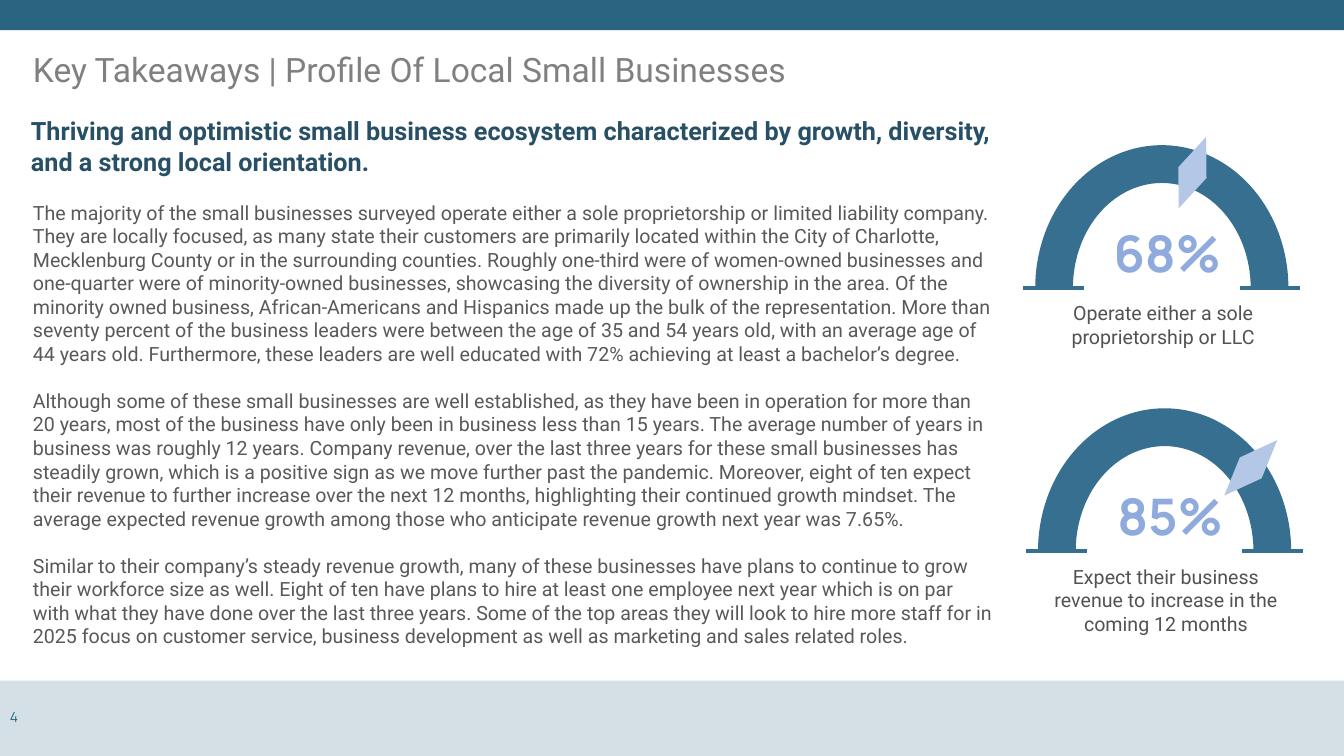
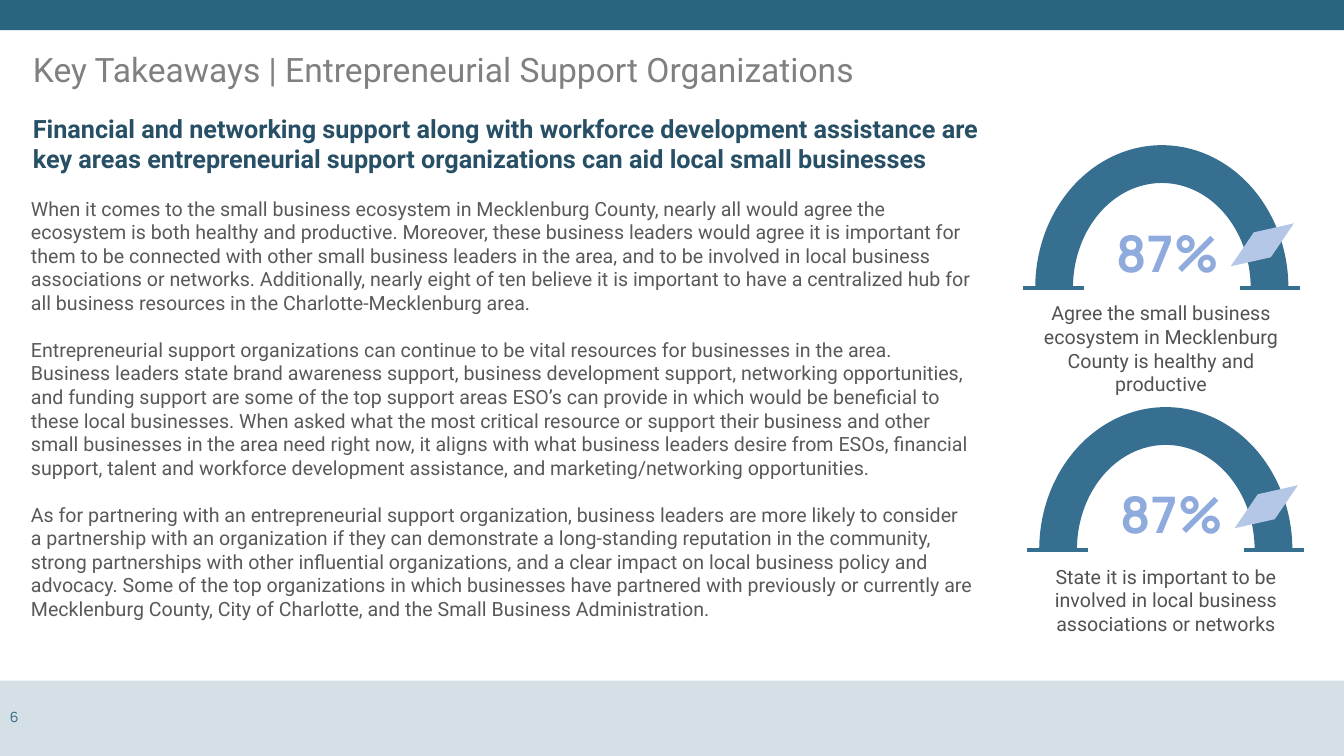
"""Builds two key-takeaway slides with text on the left and gauges on the right."""
from lxml.etree import SubElement
from pptx import Presentation
from pptx.dml.color import RGBColor
from pptx.enum.shapes import MSO_CONNECTOR, MSO_SHAPE
from pptx.enum.text import MSO_ANCHOR, PP_ALIGN
from pptx.oxml.ns import qn
from pptx.util import Cm, Pt

THEME = {
    "band": "296581",
    "arc": "366F90",
    "needle": "B4C7E7",
    "footer_alpha": 20,
    "text": {
        "title": {"color": "808080", "font": {"name": "Roboto", "size": Pt(24)},
                  "paragraph": {"line_spacing": 0.9}},
        "headline": {"color": "274F66", "font": {"name": "Roboto", "size": Pt(18), "bold": True}},
        "body": {"color": "595959", "font": {"name": "Roboto", "size": Pt(14)}, "gap": Pt(16.8)},
        "caption": {"color": "525252", "font": {"name": "Roboto", "size": Pt(14)},
                    "paragraph": {"alignment": PP_ALIGN.CENTER}},
        "value": {"color": "8FAADC", "font": {"name": "Manrope", "size": Pt(36), "bold": True},
                  "paragraph": {"alignment": PP_ALIGN.CENTER}},
        "number": {"color": "296581", "font": {"name": "Manrope", "size": Pt(10)},
                   "frame": {"vertical_anchor": MSO_ANCHOR.MIDDLE}},
    },
}

SLIDE_WIDTH, SLIDE_HEIGHT = 33.87, 19.05
TOP_BAND_HEIGHT, FOOTER_HEIGHT = 0.76, 1.9
TITLE_BOX = (0.58, 1.22, 23.14, 1.52)
NUMBER_BOX = (0, 17.55, 7.62, 1.02)
ARC_WIDTH, ARC_HEIGHT = 6.38, 7.19
ARC_ADJUSTMENTS = (107.569, 0, 0.149)
FOOT_LENGTH, FOOT_OVERHANG = 1.53, 0.3
NEEDLE_WIDTH, NEEDLE_HEIGHT = 0.76, 1.93
VALUE_OFFSET, VALUE_WIDTH, VALUE_HEIGHT = (1.5, 1.8), 3.66, 1.8

SLIDES = [
    {
        "number": "4",
        "title": "Key Takeaways | Profile Of Local Small Businesses",
        "headline": "Thriving and optimistic small business ecosystem characterized by growth, "
                    "diversity, and a strong local orientation.",
        "headline_box": (0.53, 2.79, 24.79, 1.8),
        "body_box": (0.58, 4.93, 24.71, 11.63),
        "body": [
            "The majority of the small businesses surveyed operate either a sole proprietorship or "
            "limited liability company. They are locally focused, as many state their customers are "
            "primarily located within the City of Charlotte, Mecklenburg County or in the "
            "surrounding counties. Roughly one-third were of women-owned businesses and one-quarter "
            "were of minority-owned businesses, showcasing the diversity of ownership in the area. "
            "Of the minority owned business, African-Americans and Hispanics made up the bulk of "
            "the representation. More than seventy percent of the business leaders were between "
            "the age of 35 and 54 years old, with an average age of 44 years old. Furthermore, "
            "these leaders are well educated with 72% achieving at least a bachelor’s degree.",
            "Although some of these small businesses are well established, as they have been in "
            "operation for more than 20 years, most of the business have only been in business less "
            "than 15 years. The average number of years in business was roughly 12 years. Company "
            "revenue, over the last three years for these small businesses has steadily grown, "
            "which is a positive sign as we move further past the pandemic. Moreover, eight of ten "
            "expect their revenue to further increase over the next 12 months, highlighting their "
            "continued growth mindset. The average expected revenue growth among those who "
            "anticipate revenue growth next year was 7.65%.",
            "Similar to their company’s steady revenue growth, many of these businesses have plans "
            "to continue to grow their workforce size as well. Eight of ten have plans to hire at "
            "least one employee next year which is on par with what they have done over the last "
            "three years. Some of the top areas they will look to hire more staff for in 2025 focus "
            "on customer service, business development as well as marketing and sales related "
            "roles.",
        ],
        "gauges": [
            {"value": "68%", "origin": (26.09, 3.66), "needle": (3.96, 0.69), "angle": 21,
             "caption": "Operate either a sole proprietorship or LLC",
             "caption_box": (25.81, 7.47, 7.01, 1.45)},
            {"value": "85%", "origin": (26.16, 10.29), "needle": (5.36, 1.5), "angle": 43.7,
             "caption": "Expect their business revenue to increase in the coming 12 months",
             "caption_box": (25.88, 14.1, 7.01, 2.06)},
        ],
    },
    {
        "number": "6",
        "title": "Key Takeaways | Entrepreneurial Support Organizations",
        "headline": "Financial and networking support along with workforce development assistance "
                    "are key areas entrepreneurial support organizations can aid local small "
                    "businesses",
        "headline_box": (0.58, 2.72, 24.54, 1.8),
        "body_box": (0.53, 4.83, 24.26, 11.02),
        "body": [
            "When it comes to the small business ecosystem in Mecklenburg County, nearly all would "
            "agree the ecosystem is both healthy and productive. Moreover, these business leaders "
            "would agree it is important for them to be connected with other small business leaders "
            "in the area, and to be involved in local business associations or networks. "
            "Additionally, nearly eight of ten believe it is important to have a centralized hub "
            "for all business resources in the Charlotte-Mecklenburg area.",
            "Entrepreneurial support organizations can continue to be vital resources for "
            "businesses in the area. Business leaders state brand awareness support, business "
            "development support, networking opportunities, and funding support are some of the top "
            "support areas ESO’s can provide in which would be beneficial to these local "
            "businesses. When asked what the most critical resource or support their business and "
            "other small businesses in the area need right now, it aligns with what business "
            "leaders desire from ESOs, financial support, talent and workforce development "
            "assistance, and marketing/networking opportunities.",
            "As for partnering with an entrepreneurial support organization, business leaders are "
            "more likely to consider a partnership with an organization if they can demonstrate a "
            "long-standing reputation in the community, strong partnerships with other influential "
            "organizations, and a clear impact on local business policy and advocacy. Some of the "
            "top organizations in which businesses have partnered with previously or currently are "
            "Mecklenburg County, City of Charlotte, and the Small Business Administration.",
        ],
        "gauges": [
            {"value": "87%", "origin": (26.09, 3.66), "needle": (5.72, 2.51), "angle": 55.8,
             "caption": "Agree the small business ecosystem in Mecklenburg County is healthy and "
                        "productive",
             "caption_box": (25.5, 7.47, 7.52, 2.06)},
            {"value": "87%", "origin": (26.19, 10.26), "needle": (5.72, 2.51), "angle": 55.8,
             "caption": "State it is important to be involved in local business associations or "
                        "networks",
             "caption_box": (25.88, 14.1, 7.01, 2.06)},
        ],
    },
]


def set_values(target, values):
    for name, value in values.items():
        setattr(target, name, value)


def add_text(shapes, box, texts, style_name):
    style = THEME["text"][style_name]
    frame = shapes.add_textbox(*map(Cm, box)).text_frame
    set_values(frame, {"word_wrap": True, **style.get("frame", {})})
    for index, text in enumerate(texts):
        paragraph = frame.add_paragraph() if index else frame.paragraphs[0]
        set_values(paragraph, style.get("paragraph", {}))
        if index:
            paragraph.space_before = style["gap"]
        run = paragraph.add_run()
        run.text = text
        set_values(run.font, style["font"])
        run.font.color.rgb = RGBColor.from_string(style["color"])


def add_filled(shapes, kind, box, color):
    shape = shapes.add_shape(kind, *map(Cm, box))
    shape.shadow.inherit = False
    shape.fill.solid()
    shape.fill.fore_color.rgb = RGBColor.from_string(color)
    shape.line.fill.background()
    return shape


def add_bands(shapes):
    footer_box = (0, SLIDE_HEIGHT - FOOTER_HEIGHT, SLIDE_WIDTH, FOOTER_HEIGHT)
    footer = add_filled(shapes, MSO_SHAPE.RECTANGLE, footer_box, THEME["band"])
    color = footer.fill._xPr.find(qn("a:solidFill"))[0]
    SubElement(color, qn("a:alpha"), val=str(THEME["footer_alpha"] * 1000))
    add_filled(shapes, MSO_SHAPE.RECTANGLE, (0, 0, SLIDE_WIDTH, TOP_BAND_HEIGHT), THEME["band"])


def add_foot(shapes, left, top):
    foot = shapes.add_connector(
        MSO_CONNECTOR.STRAIGHT, Cm(left), Cm(top), Cm(left + FOOT_LENGTH), Cm(top))
    foot.line.color.rgb = RGBColor.from_string(THEME["arc"])
    foot.line.width = Pt(3)
    SubElement(foot._element.spPr, qn("a:effectLst"))


def add_gauge(slide, gauge):
    shapes = slide.shapes.add_group_shape().shapes
    left, top = gauge["origin"]
    value_box = (left + VALUE_OFFSET[0], top + VALUE_OFFSET[1], VALUE_WIDTH, VALUE_HEIGHT)
    add_text(shapes, value_box, [gauge["value"]], "value")
    arc = add_filled(
        shapes, MSO_SHAPE.BLOCK_ARC, (left, top, ARC_WIDTH, ARC_HEIGHT), THEME["arc"])
    for index, adjustment in enumerate(ARC_ADJUSTMENTS):
        arc.adjustments[index] = adjustment
    for foot_left in (-FOOT_OVERHANG, ARC_WIDTH + FOOT_OVERHANG - FOOT_LENGTH):
        add_foot(shapes, left + foot_left, top + ARC_HEIGHT / 2)
    center_x, center_y = gauge["needle"]
    needle_box = (left + center_x - NEEDLE_WIDTH / 2, top + center_y - NEEDLE_HEIGHT / 2,
                  NEEDLE_WIDTH, NEEDLE_HEIGHT)
    needle = add_filled(shapes, MSO_SHAPE.FLOWCHART_SORT, needle_box, THEME["needle"])
    needle.rotation = gauge["angle"]
    add_text(slide.shapes, gauge["caption_box"], [gauge["caption"]], "caption")


def add_slide(presentation, content):
    slide = presentation.slides.add_slide(presentation.slide_layouts[6])
    add_bands(slide.shapes)
    add_text(slide.shapes, TITLE_BOX, [content["title"]], "title")
    add_text(slide.shapes, NUMBER_BOX, [content["number"]], "number")
    add_text(slide.shapes, content["headline_box"], [content["headline"]], "headline")
    add_text(slide.shapes, content["body_box"], content["body"], "body")
    for gauge in content["gauges"]:
        add_gauge(slide, gauge)


def main():
    presentation = Presentation()
    set_values(presentation, {"slide_width": Cm(SLIDE_WIDTH), "slide_height": Cm(SLIDE_HEIGHT)})
    for content in SLIDES:
        add_slide(presentation, content)
    presentation.save("out.pptx")


if __name__ == "__main__":
    main()
